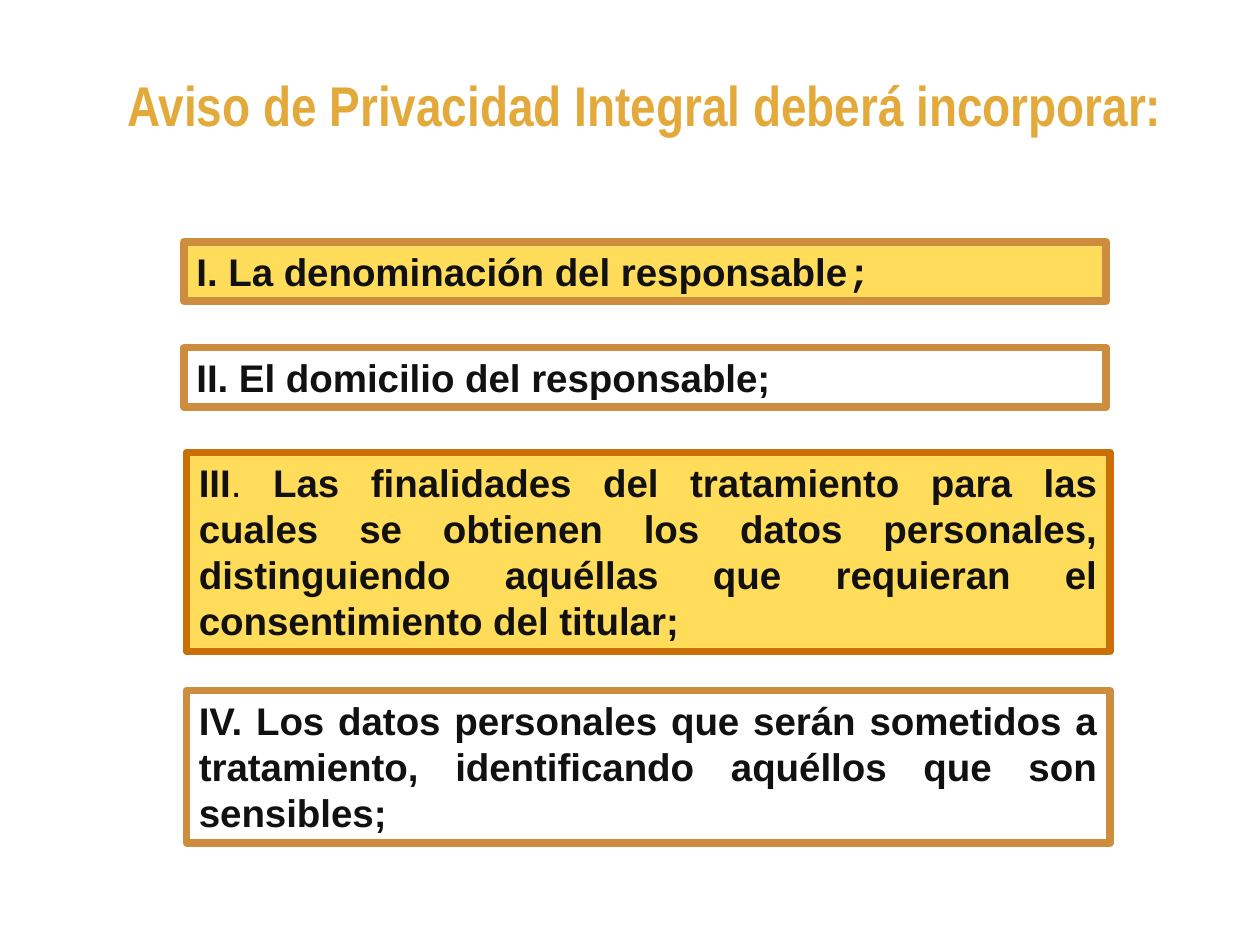
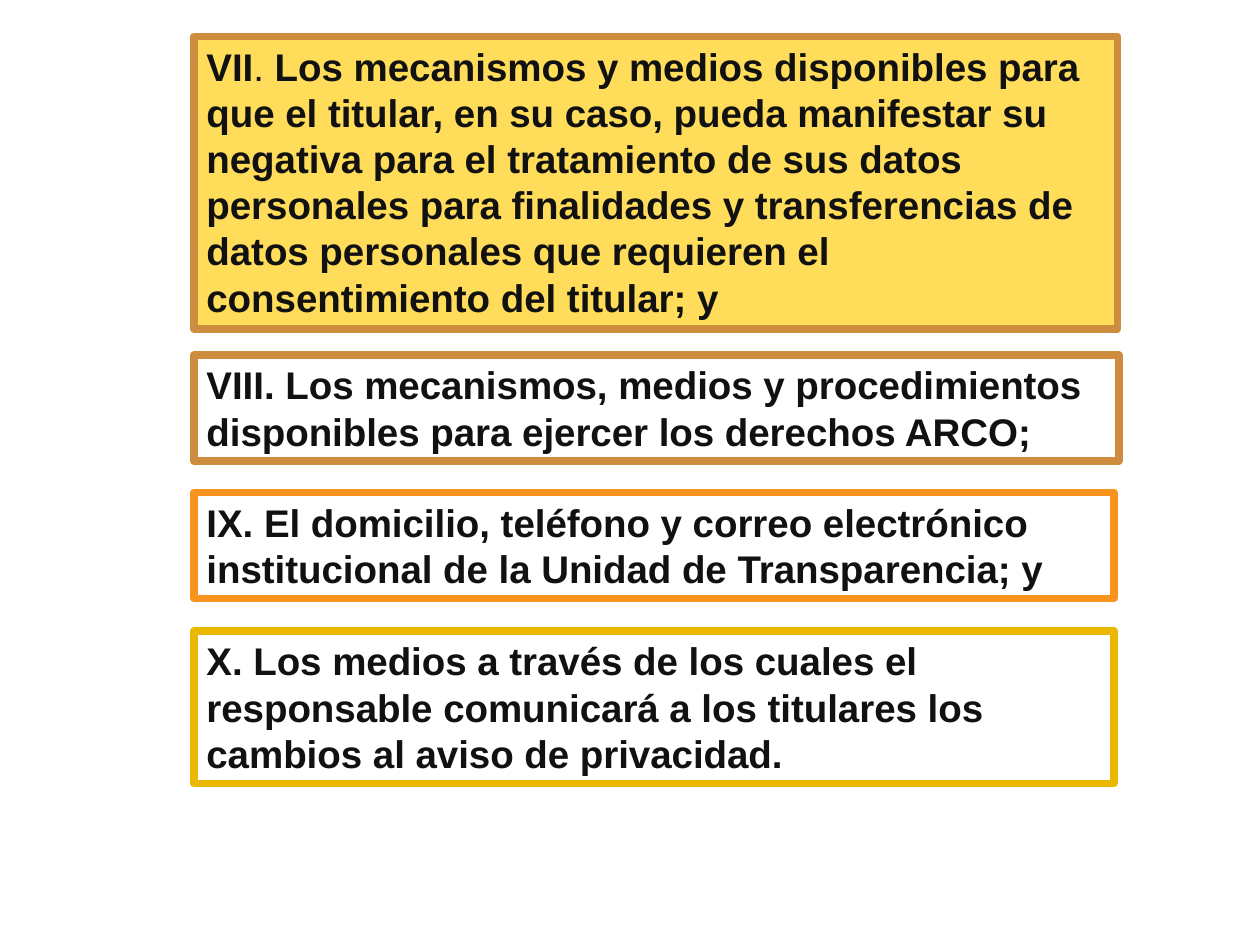
from dataclasses import dataclass
from lxml.etree import SubElement
from pptx import Presentation
from pptx.dml.color import RGBColor
from pptx.enum.shapes import MSO_SHAPE as Shape
from pptx.enum.text import MSO_ANCHOR as Anchor, MSO_AUTO_SIZE as Fit, PP_ALIGN as Align
from pptx.oxml.ns import qn
from pptx.util import Inches, Pt


@dataclass(frozen=True)
class Theme:
    ink: str = "111111"
    gold: str = "E3AA3B"
    fill: str = "FFDC59"
    tan: str = "CE8D3E"
    rust: str = "CA6F06"
    orange: str = "F8931D"
    yellow: str = "EAB800"
    font: str = "Arial"
    narrow: str = "Arial Narrow"
    mono: str = "Courier New"
    title: int = 32
    body: int = 22
    border: float = 4.33


T = Theme()
PAD, PITCH = 0.1, 0.37
DOT = (". ", {"bold": False})

SLIDES = [
    {
        "title": "Aviso de Privacidad Integral deberá incorporar:",
        "boxes": [
            {"at": (1.46, 1.92, 7.32), "lines": 1, "fill": T.fill, "runs": [
                "I. La denominación del responsable", (";", {"face": T.mono})]},
            {"at": (1.46, 2.76, 7.32), "lines": 1, "runs": [
                "II. El domicilio del responsable;"]},
            {"at": (1.48, 3.59, 7.33), "lines": 4, "fill": T.fill,
             "edge": T.rust, "align": Align.JUSTIFY, "runs": [
                "III", DOT,
                "Las finalidades del tratamiento para las cuales se obtienen "
                "los datos personales, distinguiendo aquéllas que requieran el "
                "consentimiento del titular;"]},
            {"at": (1.48, 5.48, 7.33), "lines": 3, "align": Align.JUSTIFY, "runs": [
                "IV. Los datos personales que serán sometidos a tratamiento, "
                "identificando aquéllos que son sensibles;"]},
        ],
    },
    {
        "boxes": [
            {"at": (1.54, 0.29, 7.33), "lines": 6, "fill": T.fill, "runs": [
                "VII", DOT,
                "Los mecanismos y medios disponibles para que el titular, en su "
                "caso, pueda manifestar su negativa para el tratamiento de sus "
                "datos personales para finalidades y transferencias de datos "
                "personales que requieren el consentimiento del titular; y"]},
            {"at": (1.54, 2.82, 7.34), "lines": 2, "runs": [
                "VIII. Los mecanismos, medios y procedimientos disponibles para "
                "ejercer los derechos ARCO;"]},
            {"at": (1.54, 3.91, 7.3), "lines": 2, "edge": T.orange, "runs": [
                "IX. El domicilio, teléfono y correo electrónico institucional "
                "de la Unidad de Transparencia; y"]},
            {"at": (1.54, 5.01, 7.3), "lines": 3, "edge": T.yellow, "runs": [
                "X. Los medios a través de los cuales el responsable comunicará "
                "a los titulares los cambios al aviso de privacidad."]},
        ],
    },
]


def tint(code):
    return RGBColor.from_string(code)


def place(shape, left, top, width, height):
    shape.left, shape.top = Inches(left), Inches(top)
    shape.width, shape.height = Inches(width), Inches(height)


def write(shape, runs, size=T.body, face=T.font, color=T.ink, align=Align.LEFT):
    frame = shape.text_frame
    frame.word_wrap = True
    frame.auto_size = Fit.NONE
    frame.vertical_anchor = Anchor.TOP
    para = frame.paragraphs[0]
    para.alignment = align
    for item in runs:
        text, style = (item, {}) if isinstance(item, str) else item
        run = para.add_run()
        run.text = text
        run.font.size = Pt(size)
        run.font.name = style.get("face", face)
        run.font.bold = style.get("bold", True)
        run.font.color.rgb = tint(color)


def draw(slide, at, lines, runs, fill=None, edge=T.tan, align=Align.LEFT):
    left, top, width = at
    box = slide.shapes.add_shape(Shape.RECTANGLE, 0, 0, 0, 0)
    place(box, left, top, width, PAD + PITCH * lines)
    box.shadow.inherit = False
    if fill:
        box.fill.solid()
        box.fill.fore_color.rgb = tint(fill)
    else:
        box.fill.background()
    box.line.color.rgb = tint(edge)
    box.line.width = Pt(T.border)
    SubElement(box.line._get_or_add_ln(), qn("a:round"))
    write(box, runs, align=align)


def main():
    deck = Presentation()
    deck.slide_width, deck.slide_height = Inches(10), Inches(7.5)
    for page in SLIDES:
        title = page.get("title")
        slide = deck.slides.add_slide(deck.slide_layouts[5 if title else 6])
        if title:
            place(slide.shapes.title, 0.81, 0.51, 8.62, 0.76)
            write(slide.shapes.title, [title], size=T.title, face=T.narrow,
                  color=T.gold, align=Align.CENTER)
        for box in page["boxes"]:
            draw(slide, **box)
    deck.save("out.pptx")


if __name__ == "__main__":
    main()
